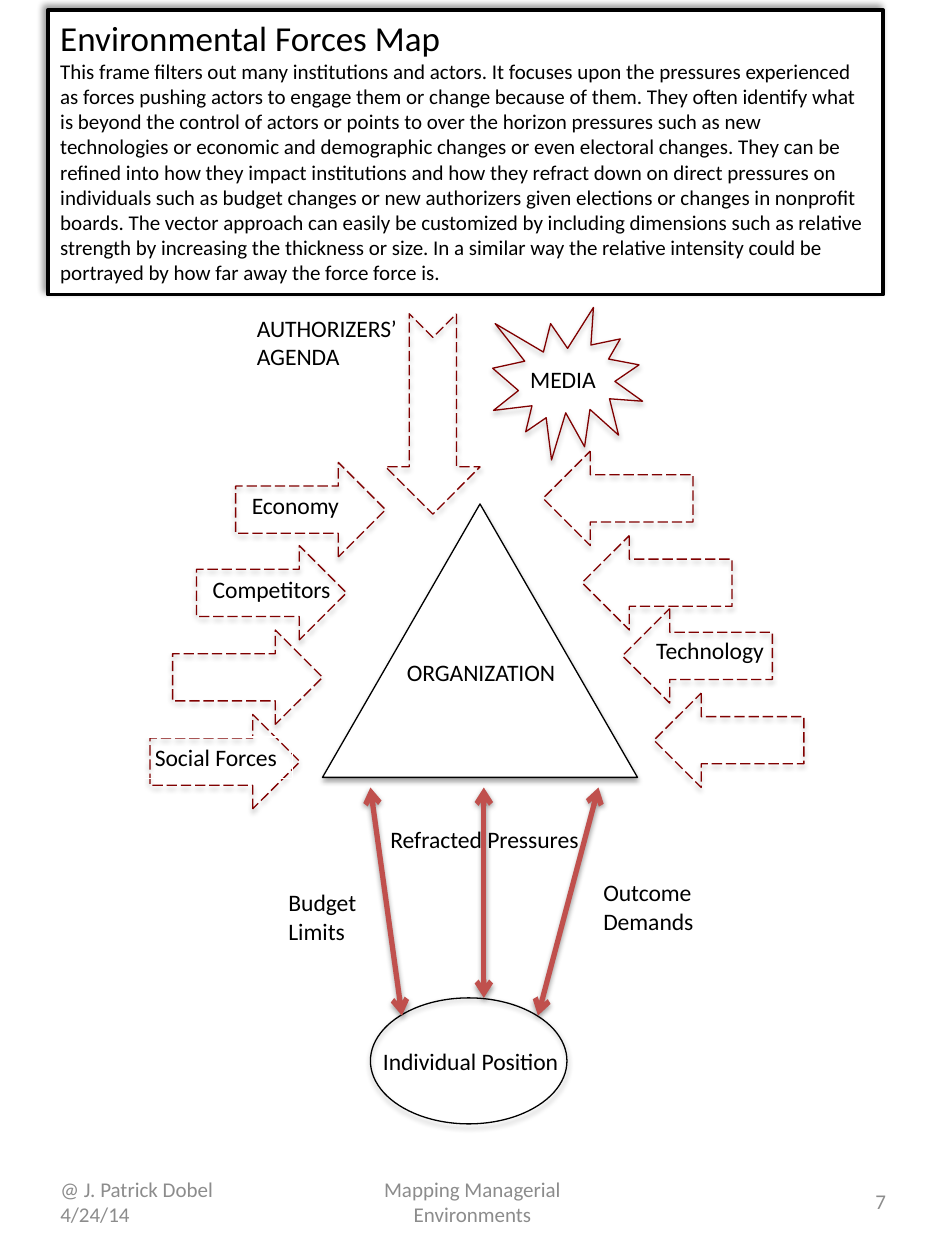
from dataclasses import dataclass

from lxml import etree
from pptx import Presentation
from pptx import util as u
from pptx.dml.color import RGBColor
from pptx.enum import dml, shapes, text
from pptx.oxml import ns

KIND = shapes.MSO_SHAPE
SIDE = text.PP_ALIGN


@dataclass(frozen=True)
class Theme:
    font: str = "Calibri"
    ink: str = "000000"
    paper: str = "FFFFFF"
    force: str = "800000"
    link: str = "C0504D"
    mute: str = "8C8C8C"
    head: float = 20
    body: float = 12
    label: float = 13.5
    thin: float = 0.75
    frame: float = 2
    thick: float = 3
    soft: tuple = (35, 3.1, 1.8, 90)
    glow: tuple = (38, 3.1, 1.6, 90)
    deep: tuple = (40, 4, 3, 225)


class Page:
    cols, rows = 75, 100

    def __init__(self, deck, theme):
        self.theme = theme
        self.wide, self.high = deck.slide_width, deck.slide_height
        self.items = deck.slides.add_slide(deck.slide_layouts[6]).shapes

    def grid(self, *cells):
        spans = (self.wide / self.cols, self.high / self.rows)
        return [round(cell * spans[i % 2]) for i, cell in enumerate(cells)]

    def shade(self, item, look=None):
        root = etree.SubElement(item._element.spPr, ns.qn("a:effectLst"))
        if look:
            alpha, blur, dist, turn = look
            outer = etree.SubElement(
                root, ns.qn("a:outerShdw"), blurRad=str(u.Pt(blur)),
                dist=str(u.Pt(dist)), dir=str(turn * 60000), rotWithShape="0")
            tint = etree.SubElement(outer, ns.qn("a:srgbClr"), val=self.theme.ink)
            etree.SubElement(tint, ns.qn("a:alpha"), val=str(alpha * 1000))

    def stroke(self, item, hue, width):
        item.line.color.rgb = RGBColor.from_string(hue)
        item.line.width = u.Pt(width)

    def shape(self, kind, box, hue, fill=None, width=None, dash=False, turn=0, look=None):
        item = self.items.add_shape(kind, *self.grid(*box))
        item.rotation = turn
        if fill:
            item.fill.solid()
            item.fill.fore_color.rgb = RGBColor.from_string(fill)
        else:
            item.fill.background()
        self.stroke(item, hue, width or self.theme.thin)
        if dash:
            item.line.dash_style = dml.MSO_LINE.LONG_DASH
        self.shade(item, look)
        return item

    def force(self, kind, box, turn=0, dash=True):
        return self.shape(kind, box, self.theme.force, dash=dash, turn=turn,
                          look=self.theme.soft)

    def link(self, start, end):
        item = self.items.add_connector(
            shapes.MSO_CONNECTOR.STRAIGHT, *self.grid(*start, *end))
        self.stroke(item, self.theme.link, self.theme.thick)
        line = item._element.spPr.find(ns.qn("a:ln"))
        for tip in ("headEnd", "tailEnd"):
            etree.SubElement(line, ns.qn("a:" + tip), type="arrow")
        self.shade(item, self.theme.glow)

    def fill_text(self, item, lines, hue=None, side=SIDE.LEFT, wrap=False, grow=True,
                  anchor=text.MSO_ANCHOR.TOP):
        frame = item.text_frame
        frame.word_wrap = wrap
        frame.vertical_anchor = anchor
        if grow:
            frame.auto_size = text.MSO_AUTO_SIZE.SHAPE_TO_FIT_TEXT
        for i, (words, size) in enumerate(lines):
            para = frame.add_paragraph() if i else frame.paragraphs[0]
            para.alignment = side
            run = para.add_run()
            run.text = words
            run.font.name = self.theme.font
            run.font.size = u.Pt(size)
            run.font.color.rgb = RGBColor.from_string(hue or self.theme.ink)

    def label(self, box, *lines):
        item = self.items.add_textbox(*self.grid(*box))
        self.fill_text(item, [(line, self.theme.label) for line in lines])

    def foot(self, left, width, words, side):
        item = self.items.add_textbox(*self.grid(left, 92.7, width, 5.3))
        self.fill_text(item, [(words, self.theme.body)], self.theme.mute, side, wrap=True,
                       grow=False, anchor=text.MSO_ANCHOR.MIDDLE)


INTRO = (
    "This frame filters out many institutions and actors. It focuses upon the pressures "
    "experienced as forces pushing actors to engage them or change because of them. They "
    "often identify what is beyond the control of actors or points to over the horizon "
    "pressures such as new technologies or economic and demographic changes or even "
    "electoral changes. They can be refined into how they impact institutions and how they "
    "refract down on direct pressures on individuals such as budget changes or new "
    "authorizers given elections or changes in nonprofit boards. The vector approach can "
    "easily be customized by including dimensions such as relative strength by increasing "
    "the thickness or size. In a similar way the relative intensity could be portrayed by "
    "how far away the force force is."
)


def main():
    deck = Presentation()
    deck.slide_width, deck.slide_height = u.Inches(7.5), u.Inches(10)
    theme = Theme()
    page = Page(deck, theme)

    panel = page.shape(KIND.RECTANGLE, (3.8, 0.8, 66.3, 22.6), theme.ink, theme.paper,
                       theme.frame, look=theme.deep)
    page.fill_text(panel, [("Environmental Forces Map", theme.head), (INTRO, theme.body)],
                   wrap=True)

    page.shape(KIND.ISOSCELES_TRIANGLE, (25.6, 40, 25, 21.7), theme.ink, theme.paper,
               look=theme.soft)
    page.shape(KIND.OVAL, (29.4, 79.2, 15.6, 10), theme.ink, look=theme.soft)

    inward = {
        270: ((20.9, 34.5), (17.8, 41.1), (15.9, 47.8), (14.1, 54.5)),
        90: ((45.3, 33.6), (48.4, 40.3), (51.6, 46.1), (54.1, 52.8)),
    }
    for turn, spots in inward.items():
        for spot in spots:
            page.force(KIND.DOWN_ARROW, (*spot, 7.5, 11.9), turn)
    page.force(KIND.EXPLOSION1, (39.1, 24.4, 11.9, 12.1), dash=False)
    page.force(KIND.NOTCHED_RIGHT_ARROW, (26.4, 29.1, 15.9, 7.5), 90)

    for start, end in (((29.4, 62.5), (31.9, 80.6)),
                       ((38.4, 62.5), (38.4, 79.2)),
                       ((47.5, 62.5), (42.7, 80.6))):
        page.link(start, end)

    social = page.shape(KIND.RECTANGLE, (11.3, 58.5, 11.9, 3.3), theme.paper)
    page.fill_text(social, [("Social Forces", theme.label)])

    one, two = 3.3, 5.6
    page.label((31.3, 51.7, 14.1, one), "ORGANIZATION")
    page.label((29.4, 82.6, 16.2, one), "Individual Position")
    page.label((21.9, 70, 7.5, two), "Budget", "Limits")
    page.label((46.9, 69.2, 9.3, two), "Outcome", "Demands")
    page.label((30, 65, 17.3, one), "Refracted Pressures")
    page.label((15.9, 45.1, 11.6, one), "Competitors")
    page.label((19, 38.5, 9.1, one), "Economy")
    page.label((19.4, 24.4, 13.4, two), "AUTHORIZERS’", "AGENDA")
    page.label((51.1, 50, 10.9, one), "Technology")
    page.label((41.1, 28.5, 7.3, one), "MEDIA")

    page.foot(3.8, 17.5, "@ J. Patrick Dobel 4/24/14", SIDE.LEFT)
    page.foot(25.6, 23.8, "Mapping Managerial Environments", SIDE.CENTER)
    page.foot(53.8, 17.5, "7", SIDE.RIGHT)
    deck.save("out.pptx")


if __name__ == "__main__":
    main()
